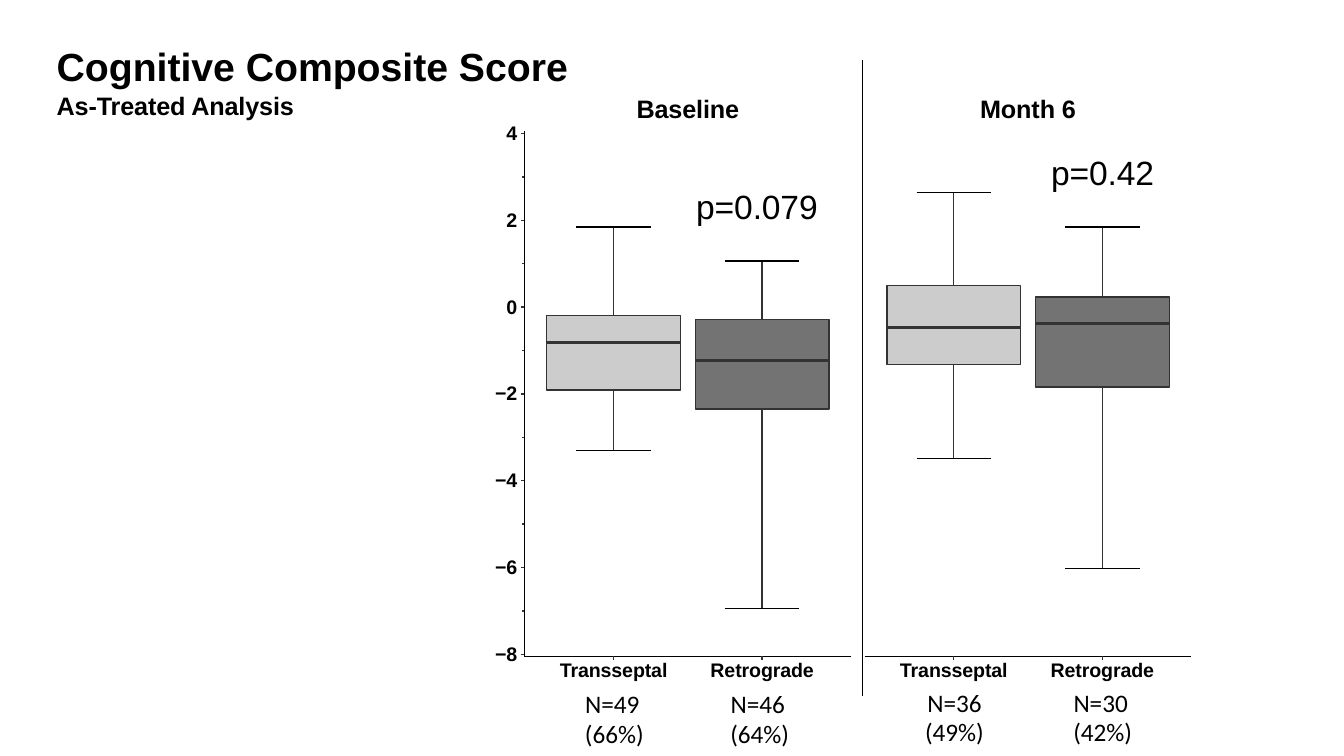
from lxml.etree import SubElement
from pptx import Presentation
from pptx.dml.color import RGBColor
from pptx.enum.shapes import MSO_CONNECTOR, MSO_SHAPE
from pptx.enum.text import MSO_ANCHOR, PP_ALIGN
from pptx.oxml.ns import qn
from pptx.util import Pt

COLORS = {
    "black": "000000",
    "outline": "333333",
    "Transseptal": "CCCCCC",
    "Retrograde": "737373",
}

# Score axis and panel geometry, in points
ZERO_Y, POINTS_PER_SCORE = 219.4, 31
AXIS_Y = 468.9
AXIS_LENGTH = 233.3
GROUP_OFFSETS = (63.7, 169.8)
BOX_WIDTH, CAP_WIDTH = 95.6, 53.2
THIN, MEDIAN_WIDTH = 0.96, 2

# Each group: name, (maximum, Q3, median, Q1, minimum), sample size,
# (left indent, first-line indent) of the sample size
PANELS = [
    {
        "title": "Baseline", "left": 374.6, "p_value": "p=0.079",
        "p_center": 540.7, "p_top": 131.8, "sample_gap": 6.2,
        "joined_whiskers": False,
        "groups": [
            ("Transseptal", (1.85, -0.19, -0.81, -1.91, -3.3),
             "N=49 (66%)", (17, -2.9)),
            ("Retrograde", (1.06, -0.29, -1.23, -2.35, -6.95),
             "N=46 (64%)", (12.5, -2.9)),
        ],
    },
    {
        "title": "Month 6", "left": 617.6, "p_value": "p=0.42",
        "p_center": 787.6, "p_top": 107.3, "sample_gap": 5,
        "joined_whiskers": True,
        "groups": [
            ("Transseptal", (2.64, 0.5, -0.47, -1.33, -3.49),
             "N=36 (49%)", (17, 0)),
            ("Retrograde", (1.85, 0.23, -0.38, -1.84, -6.02),
             "N=30 (42%)", (16.5, -2.9)),
        ],
    },
]


def score_y(score):
    return ZERO_Y - POINTS_PER_SCORE * score


def color(name):
    return RGBColor.from_string(COLORS[name])


def add_line(slide, x1, y1, x2, y2, line_color="black", width=THIN):
    line = slide.shapes.add_connector(
        MSO_CONNECTOR.STRAIGHT, Pt(x1), Pt(y1), Pt(x2), Pt(y2))
    line.line.color.rgb = color(line_color)
    line.line.width = Pt(width)
    SubElement(line._element.spPr, qn("a:effectLst"))


def add_strokes(slide, segments):
    """Draw several separate segments (x1, y1, x2, y2) as one outline."""
    builder = slide.shapes.build_freeform(Pt(segments[0][0]), Pt(segments[0][1]))
    for index, (x1, y1, x2, y2) in enumerate(segments):
        if index:
            builder.move_to(Pt(x1), Pt(y1))
        builder.add_line_segments([(Pt(x2), Pt(y2))], close=False)
    shape = builder.convert_to_shape()
    shape.shadow.inherit = False
    shape.fill.background()
    shape.line.color.rgb = color("outline")
    shape.line.width = Pt(THIN)


def prepare_frame(shape, top_inset=1):
    frame = shape.text_frame
    frame.word_wrap = True
    frame.vertical_anchor = MSO_ANCHOR.TOP
    frame.margin_left = frame.margin_right = frame.margin_bottom = 0
    frame.margin_top = Pt(top_inset)
    return frame


def write_text(paragraph, text, size=18, bold=True, font="Arial",
               align=PP_ALIGN.CENTER, before=1, line_spacing=None, tracking=-10):
    run = paragraph.add_run()
    run.text = text
    run.font.name = font
    run.font.size = Pt(size)
    run.font.bold = bold
    run.font.color.rgb = color("black")
    run._r.get_or_add_rPr().set("spc", str(tracking))
    paragraph.alignment = align
    paragraph.space_before = Pt(before)
    if line_spacing:
        paragraph.line_spacing = Pt(line_spacing)


def add_label(slide, text, left, top, width, height, **text_format):
    box = slide.shapes.add_textbox(Pt(left), Pt(top), Pt(width), Pt(height))
    write_text(prepare_frame(box).paragraphs[0], text, **text_format)


def add_heading(slide):
    title = slide.shapes.title
    title.left, title.top = Pt(40.5), Pt(29.5)
    title.width, title.height = Pt(380), Pt(35.3)
    write_text(prepare_frame(title).paragraphs[0], "Cognitive Composite Score",
               size=28, align=PP_ALIGN.LEFT, tracking=0)
    add_label(slide, "As-Treated Analysis", 40.5, 63.4, 190, 23.8,
              align=PP_ALIGN.LEFT)


def add_score_axis(slide, x):
    add_line(slide, x, AXIS_Y, x, 93.6)
    ticks = []
    for score in range(-8, 5):
        is_major = score % 2 == 0
        y = score_y(score)
        ticks.append((x - (2.2 if is_major else 1.4), y, x, y))
        if is_major:
            add_label(slide, str(score).replace("-", "−"), x - 35, y - 10,
                      30, 19.4, size=14, align=PP_ALIGN.RIGHT, before=1.4)
    add_strokes(slide, ticks)


def add_box_plot(slide, name, scores, center, joined_whiskers):
    maximum, upper, median, lower, minimum = map(score_y, scores)
    left, right = center - BOX_WIDTH / 2, center + BOX_WIDTH / 2
    # Whiskers with their caps
    whiskers = [(center, maximum, center, upper), (center, lower, center, minimum)]
    if joined_whiskers:
        add_strokes(slide, whiskers)
    else:
        for whisker in whiskers:
            add_line(slide, *whisker, "outline")
    for end in (maximum, minimum):
        add_line(slide, center - CAP_WIDTH / 2, end, center + CAP_WIDTH / 2, end)
    # Quartile box with its median
    box = slide.shapes.add_shape(MSO_SHAPE.RECTANGLE, Pt(left), Pt(upper),
                                 Pt(BOX_WIDTH), Pt(lower - upper))
    box.shadow.inherit = False
    box.fill.solid()
    box.fill.fore_color.rgb = color(name)
    box.line.color.rgb = color("outline")
    box.line.width = Pt(THIN)
    add_line(slide, left, median, right, median, "outline", MEDIAN_WIDTH)


def add_group_label(slide, name, sample, indents, center, sample_gap):
    box = slide.shapes.add_textbox(Pt(center - 41), Pt(464.6), Pt(82), Pt(70.5))
    frame = prepare_frame(box, top_inset=5)
    write_text(frame.paragraphs[0], name, size=14, before=5)
    paragraph = frame.add_paragraph()
    write_text(paragraph, sample, bold=False, font="Calibri",
               before=sample_gap, line_spacing=20.9, tracking=0)
    # Side indents break the line between count and share
    properties = paragraph._p.get_or_add_pPr()
    left, first_line = indents
    for key, value in (("marL", left), ("marR", 16), ("indent", first_line)):
        properties.set(key, str(Pt(value)))


def add_panel(slide, panel):
    left = panel["left"]
    centers = [left + offset for offset in GROUP_OFFSETS]
    add_line(slide, left, AXIS_Y, left + AXIS_LENGTH, AXIS_Y)
    add_strokes(slide, [(x, AXIS_Y + 2.4, x, AXIS_Y) for x in centers])
    add_label(slide, panel["title"], sum(centers) / 2 - 50, 65.8, 100, 23.8)
    for center, (name, scores, sample, indents) in zip(centers, panel["groups"]):
        add_box_plot(slide, name, scores, center, panel["joined_whiskers"])
        add_group_label(slide, name, sample, indents, center, panel["sample_gap"])
    add_label(slide, panel["p_value"], panel["p_center"] - 50, panel["p_top"],
              100, 31, size=24, bold=False)


def main():
    presentation = Presentation()
    presentation.slide_width, presentation.slide_height = Pt(960), Pt(540)
    slide = presentation.slides.add_slide(presentation.slide_layouts[5])

    add_heading(slide)
    add_score_axis(slide, PANELS[0]["left"])
    for panel in PANELS:
        add_panel(slide, panel)
    # Divider between the two visits
    add_line(slide, 616, 42.7, 616, 497, width=1.25)

    presentation.save("out.pptx")


if __name__ == "__main__":
    main()
